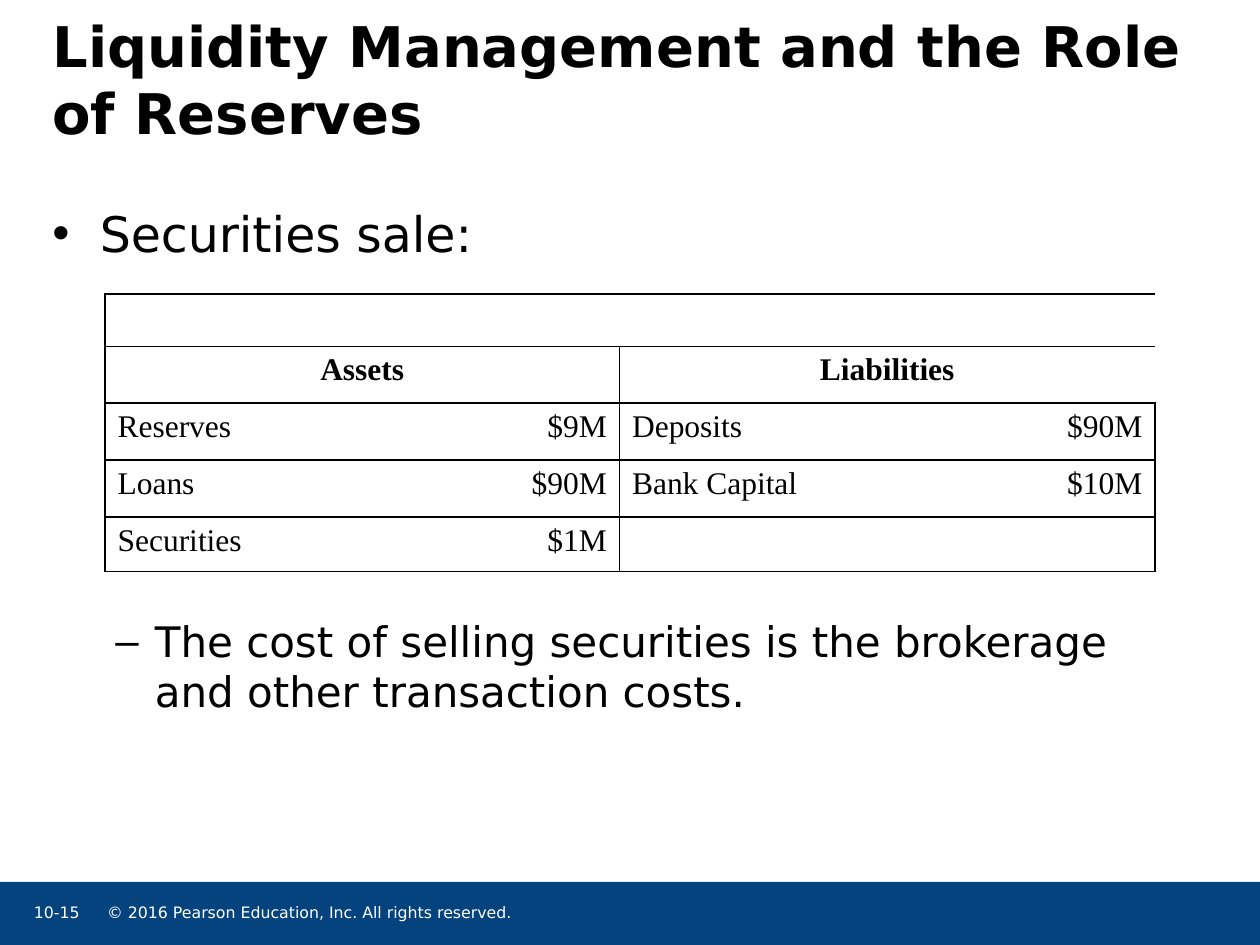
from lxml.etree import SubElement
from pptx import Presentation
from pptx.dml.color import RGBColor
from pptx.enum.shapes import MSO_SHAPE
from pptx.enum.text import MSO_ANCHOR, MSO_AUTO_SIZE, PP_ALIGN
from pptx.oxml.ns import qn
from pptx.util import Pt

BLACK = RGBColor(0, 0, 0)
WHITE = RGBColor(255, 255, 255)
NAVY = RGBColor(0x04, 0x43, 0x7D)
SANS = "DejaVu Sans"
SERIF = "Times New Roman"


class PageBuilder:
    """Holds the style and the current slide."""

    def __init__(self, page):
        self.page = page

    def style(self, para, size, font=SANS, color=BLACK, bold=False):
        para.font.name = font
        para.font.size = Pt(size)
        para.font.color.rgb = color
        para.font.bold = bold

    def place(self, box, left, top, width, height):
        box.left, box.top = Pt(left), Pt(top)
        box.width, box.height = Pt(width), Pt(height)

    def frame(self, box, right=0, top=0):
        frame = box.text_frame
        frame.word_wrap = True
        frame.auto_size = MSO_AUTO_SIZE.NONE
        frame.margin_left = frame.margin_bottom = 0
        frame.margin_right, frame.margin_top = Pt(right), Pt(top)
        return frame

    def title(self, text, *area):
        box = self.page.shapes.title
        self.place(box, *area)
        frame = self.frame(box)
        frame.vertical_anchor = MSO_ANCHOR.MIDDLE
        para = frame.paragraphs[0]
        para.text = text
        para.alignment = PP_ALIGN.LEFT
        self.style(para, 32, bold=True)

    def body(self, items, *area):
        """Each item: text, level, bullet, size, indent, hanging, space before."""
        box = self.page.placeholders[1]
        self.place(box, *area)
        frame = self.frame(box, right=7.2, top=2)
        for index, (text, level, mark, size, indent, hanging, before) in enumerate(items):
            para = frame.add_paragraph() if index else frame.paragraphs[0]
            para.text = text
            para.level = level
            para.space_before = Pt(before)
            properties = para._p.get_or_add_pPr()
            properties.set("marL", str(Pt(indent)))
            properties.set("indent", str(-Pt(hanging)))
            SubElement(properties, qn("a:buChar"), char=mark)
            self.style(para, size)

    def bar(self, color, *area):
        bar = self.page.shapes.add_shape(MSO_SHAPE.RECTANGLE, *map(Pt, area))
        bar.shadow.inherit = False
        bar.fill.solid()
        bar.fill.fore_color.rgb = color
        bar.line.fill.background()

    def label(self, text, *area):
        box = self.page.shapes.add_textbox(*map(Pt, area))
        para = self.frame(box).paragraphs[0]
        para.text = text
        self.style(para, 9, color=WHITE)

    def borders(self, cell, widths):
        """Draw the edges L, R, T, B in points; zero means no line."""
        properties = cell._tc.get_or_add_tcPr()
        for edge, width in zip("LRTB", widths):
            line = SubElement(properties, qn(f"a:ln{edge}"), w=str(Pt(width)))
            if width:
                fill = SubElement(line, qn("a:solidFill"))
                SubElement(fill, qn("a:srgbClr"), val=str(BLACK))
            else:
                SubElement(line, qn("a:noFill"))
        cell.fill.background()

    def balance_sheet(self, rows, columns, heights, left, top):
        shape = self.page.shapes.add_table(
            len(rows), len(columns), Pt(left), Pt(top), Pt(sum(columns)), Pt(sum(heights)))
        table = shape.table
        table.first_row = table.horz_banding = False
        for column, width in zip(table.columns, columns):
            column.width = Pt(width)
        for row, height in zip(table.rows, heights):
            row.height = Pt(height)

        # The top row spans the table, each heading spans one side
        table.cell(0, 0).merge(table.cell(0, 3))
        for first in (0, 2):
            table.cell(1, first).merge(table.cell(1, first + 1))

        for r, texts in enumerate(rows):
            for c, text in enumerate(texts):
                cell = table.cell(r, c)
                name_side = c % 2 == 0
                whole = r == 0
                self.borders(cell, (
                    1 if c == 0 or (name_side and not whole) else 0,
                    1 if c == 3 or (not name_side and not whole) else 0,
                    1.5 if r == 2 else 1,
                    1.5 if r == 1 else 1))
                para = cell.text_frame.paragraphs[0]
                if text:
                    para.text = text
                if r == 1:
                    para.alignment = PP_ALIGN.CENTER
                else:
                    para.alignment = PP_ALIGN.LEFT if name_side else PP_ALIGN.RIGHT
                self.style(para, 18, SERIF, bold=r == 1)


def main():
    deck = Presentation()
    deck.slide_width, deck.slide_height = Pt(720), Pt(540)
    builder = PageBuilder(deck.slides.add_slide(deck.slide_layouts[1]))

    # Footer
    builder.bar(NAVY, 0, 504, 720, 36)
    builder.label("© 2016 Pearson Education, Inc. All rights reserved.", 61.2, 516, 425, 14.4)
    builder.label("10-15", 19.4, 516, 28, 14.4)

    # Title and list, with room for the table between the two items
    builder.title("Liquidity Management and the Role of Reserves", 30, 0, 660, 90)
    builder.body([
        ("Securities sale:", 0, "•", 28, 27, 27, 0),
        ("The cost of selling securities is the brokerage and other transaction costs.",
         1, "–", 24, 58.5, 22.5, 202),
    ], 30, 114, 660, 366)

    # Balance sheet
    builder.balance_sheet([
        ("", "", "", ""),
        ("Assets", "", "Liabilities", ""),
        ("Reserves", "$9M", "Deposits", "$90M"),
        ("Loans", "$90M", "Bank Capital", "$10M"),
        ("Securities", "$1M", "", ""),
    ], (143.5, 150.5, 167, 139), (30, 32.5, 32.5, 32.5, 31), 60, 168)

    deck.save("out.pptx")


if __name__ == "__main__":
    main()
